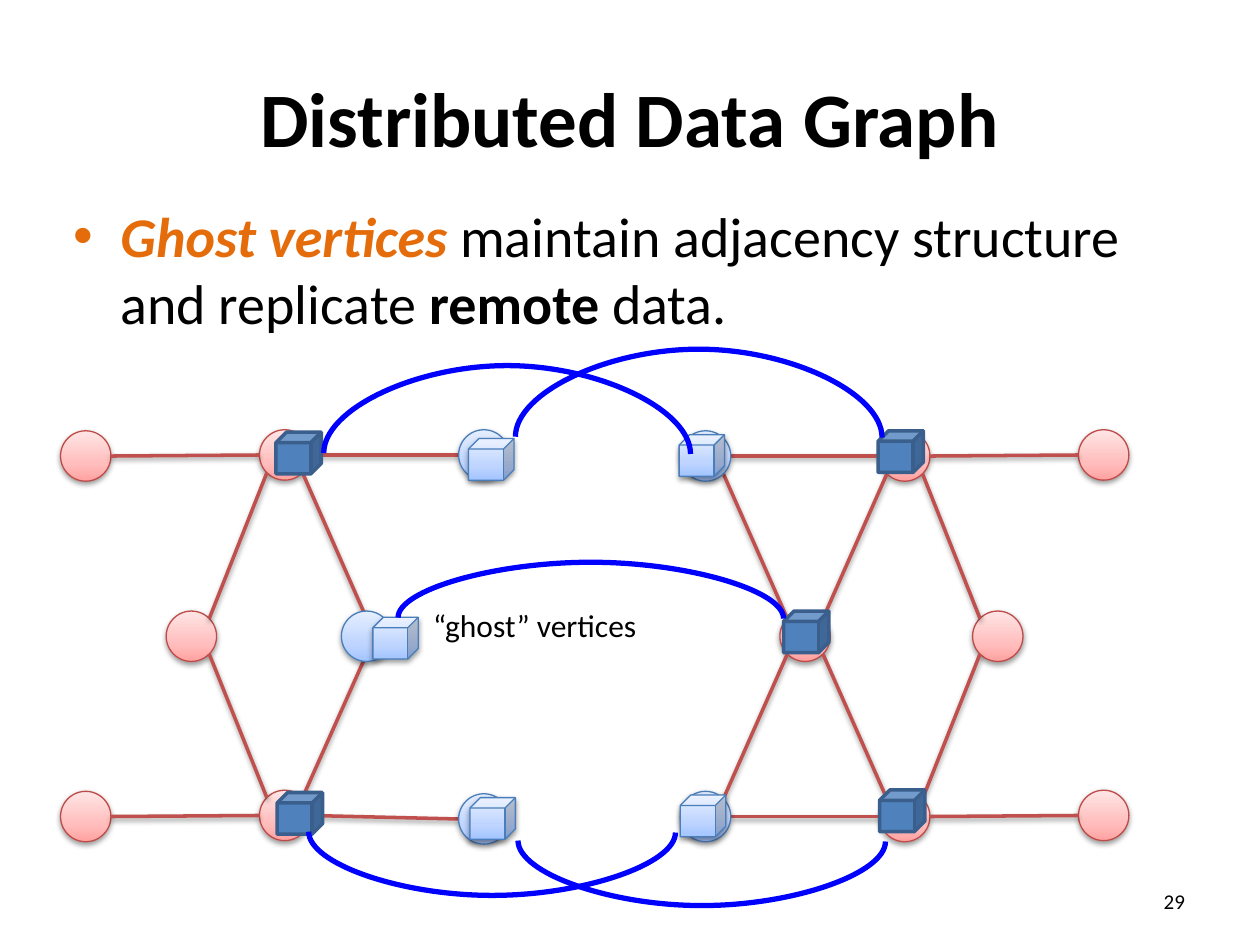
import copy

import pptx
import pptx.dml.color
import pptx.enum.shapes
import pptx.enum.text
import pptx.oxml
import pptx.oxml.ns
import pptx.util

Pt = pptx.util.Pt
qn = pptx.oxml.ns.qn
SHAPE = pptx.enum.shapes.MSO_SHAPE
CONNECTOR = pptx.enum.shapes.MSO_CONNECTOR
ALIGN = pptx.enum.text.PP_ALIGN
ANCHOR = pptx.enum.text.MSO_ANCHOR

RADIUS = 14.4
DIAGONAL = 10.2
CUBE_WIDTH, CUBE_HEIGHT = 25.9, 23.8
ARC_OFFSET = 0.5

RED = [(0, "FFE5E5"), (0.65, "FFBEBD"), (1, "FFA2A1")]
BLUE = [(0, "E5EEFF"), (0.65, "BFD5FF"), (1, "A3C4FF")]

# Vertex centres by partition
LOCAL = {
    "a top": (49, 260.6), "b top": (162.7, 260), "a low": (49, 466.6),
    "b low": (162.7, 466), "a mid": (109.4, 363.6),
    "c top": (517, 260.6), "d top": (630.7, 260), "c low": (517, 466.6),
    "d low": (630.7, 466), "c mid": (460.1, 363.6), "d mid": (570.2, 363.6),
}
GHOST = {
    "left top": (276.5, 260), "left low": (276.5, 468), "left mid": (209.5, 363.6),
    "right top": (403.2, 260.6), "right low": (403.2, 466.6),
}
EDGES = [
    ("a top", "b top"), ("a low", "b low"), ("a mid", "b top"), ("a mid", "b low"),
    ("b top", "left top"), ("b low", "left low"), ("b top", "left mid"), ("b low", "left mid"),
    ("right top", "c top"), ("right low", "c low"), ("c top", "d top"), ("c low", "d low"),
    ("right top", "c mid"), ("right low", "c mid"), ("c mid", "c top"), ("c mid", "c low"),
    ("c top", "d mid"), ("c low", "d mid"),
]
# Left end, right end, height of both ends, rise (negative) or drop of the arc
ARCS = [
    (294.5, 504, 249.8, -49), (227.5, 447.8, 353.2, -31), (296, 506, 480.6, 36.4),
    (185, 394.6, 259.2, -49), (176.4, 386, 475.5, 35.7),
]
MASTER_CUBES = [(447.8, 349.2), (501.8, 246.2), (502.6, 451.4), (157.7, 247), (158.4, 452.9)]
REPLICA_CUBES = [(213.1, 352.8), (267.8, 250.6), (268.6, 455.8), (388.1, 248.4), (388.8, 454.3)]


def color(hex_string):
    return pptx.dml.color.RGBColor.from_string(hex_string)


def write(paragraph, text, size=18, fill="000000", bold=False, italic=False):
    run = paragraph.add_run()
    run.text = text
    run.font.name = "Calibri"
    run.font.size = Pt(size)
    run.font.bold = bold
    run.font.italic = italic
    run.font.color.rgb = color(fill)


def place(item, x, y, width, height):
    item.left, item.top, item.width, item.height = Pt(x), Pt(y), Pt(width), Pt(height)


class GraphSlide:
    edge_color = "C0504D"
    arc_color = "0000FF"

    def __init__(self, deck):
        self.slide = deck.slides.add_slide(deck.slide_layouts[1])
        self.shapes = self.slide.shapes

    def title(self, text):
        heading = self.shapes.title
        place(heading, 36, 21.6, 648, 90)
        heading.text_frame.vertical_anchor = ANCHOR.MIDDLE
        paragraph = heading.text_frame.paragraphs[0]
        paragraph.alignment = ALIGN.CENTER
        write(paragraph, text, size=44, bold=True)

    def bullet(self, runs):
        body = self.slide.placeholders[1]
        place(body, 34.6, 111.6, 655, 100.8)
        for text, style in runs:
            write(body.text_frame.paragraphs[0], text, size=32, **style)

    def label(self, text, x, y, width, height, size, align=ALIGN.LEFT, anchor=ANCHOR.TOP):
        frame = self.shapes.add_textbox(Pt(x), Pt(y), Pt(width), Pt(height)).text_frame
        frame.word_wrap = True
        frame.vertical_anchor = anchor
        frame.paragraphs[0].alignment = align
        write(frame.paragraphs[0], text, size=size)

    def effects(self, item, shadow):
        """Give the item a soft drop shadow, or an empty effect list."""
        properties = item._element.spPr
        for old in properties.findall(qn("a:effectLst")):
            properties.remove(old)
        inner = (
            '<a:outerShdw blurRad="39370" dist="20320" dir="5400000" rotWithShape="0">'
            '<a:srgbClr val="000000"><a:alpha val="38000"/></a:srgbClr></a:outerShdw>'
        ) if shadow else ""
        namespace = pptx.oxml.ns.nsdecls("a")
        properties.append(pptx.oxml.parse_xml(f"<a:effectLst {namespace}>{inner}</a:effectLst>"))

    def gradient(self, shape, stops):
        shape.fill.gradient()
        shape.fill.gradient_angle = 270
        stop_list = shape._element.spPr.find(qn("a:gradFill")).find(qn("a:gsLst"))
        stop_list.append(copy.deepcopy(stop_list[-1]))
        for stop, (position, tint) in zip(shape.fill.gradient_stops, stops):
            stop.position = position
            stop.color.rgb = color(tint)

    def solid(self, kind, x, y, width, height, fill, line, weight=0.75):
        """Draw a shape; a list of gradient stops as fill also brings a shadow."""
        shape = self.shapes.add_shape(kind, Pt(x), Pt(y), Pt(width), Pt(height))
        shaded = isinstance(fill, list)
        if shaded:
            self.gradient(shape, fill)
        else:
            shape.fill.solid()
            shape.fill.fore_color.rgb = color(fill)
        shape.line.color.rgb = color(line)
        shape.line.width = Pt(weight)
        self.effects(shape, shaded)

    def vertex(self, center, fill, line):
        x, y = center
        self.solid(SHAPE.OVAL, x - RADIUS, y - RADIUS, 2 * RADIUS, 2 * RADIUS, fill, line)

    def edge(self, start, end, end_reach=DIAGONAL):
        """Join two vertices, left to right, at the rims of their circles."""
        (x1, y1), (x2, y2) = start, end
        if abs(y2 - y1) < RADIUS:
            x1, x2 = x1 + RADIUS, x2 - RADIUS
        else:
            rise = DIAGONAL if y2 > y1 else -DIAGONAL
            x1, y1, x2, y2 = x1 + DIAGONAL, y1 + rise, x2 - end_reach, y2 - rise
        line = self.shapes.add_connector(CONNECTOR.STRAIGHT, Pt(x1), Pt(y1), Pt(x2), Pt(y2))
        line.line.color.rgb = color(self.edge_color)
        line.line.width = Pt(2)
        self.effects(line, True)

    def arc(self, x1, x2, y, depth):
        """Curve between two points of equal height: a turned, mirrored connector."""
        span, middle = x2 - x1, (x1 + x2) / 2
        curve = self.shapes.add_connector(CONNECTOR.CURVE, 0, 0, 1, 1)
        place(curve, middle - ARC_OFFSET / 2, y - span / 2, ARC_OFFSET, span)
        properties = curve._element.spPr
        frame = properties.find(qn("a:xfrm"))
        frame.set("rot", "16200000")
        frame.set("flipH", "1")
        guides = properties.find(qn("a:prstGeom")).get_or_add_avLst()
        bend = round(depth / ARC_OFFSET * 100000)
        guides.append(pptx.oxml.parse_xml(
            f'<a:gd {pptx.oxml.ns.nsdecls("a")} name="adj1" fmla="val {bend}"/>'))
        curve.line.color.rgb = color(self.arc_color)
        curve.line.width = Pt(3)
        self.effects(curve, False)

    def cube(self, x, y, fill, line, weight):
        self.solid(SHAPE.CUBE, x, y, CUBE_WIDTH, CUBE_HEIGHT, fill, line, weight)


def main():
    deck = pptx.Presentation()
    deck.slide_width, deck.slide_height = Pt(720), Pt(540)
    graph = GraphSlide(deck)
    graph.title("Distributed Data Graph")
    graph.bullet([
        ("Ghost vertices ", {"fill": "E46C0A", "bold": True, "italic": True}),
        ("maintain adjacency structure and replicate ", {}),
        ("remote", {"bold": True}),
        (" data.", {}),
    ])

    for center in LOCAL.values():
        graph.vertex(center, RED, "BE4B48")
    centers = {**LOCAL, **GHOST}
    for start, end in EDGES:
        reach = 0 if end == "left mid" else DIAGONAL
        graph.edge(centers[start], centers[end], end_reach=reach)
    for center in GHOST.values():
        graph.vertex(center, BLUE, "4A7EBB")

    graph.label("“ghost” vertices", 240.5, 342.7, 185, 36, size=18)
    graph.label("29", 516.2, 500.4, 168, 28.8, size=12, align=ALIGN.RIGHT, anchor=ANCHOR.MIDDLE)

    for x, y in MASTER_CUBES:
        graph.cube(x, y, "4F81BD", "3A5F8C", 2)
    for x, y in REPLICA_CUBES:
        graph.cube(x, y, BLUE, "4A7EBB", 0.75)
    for ends in ARCS:
        graph.arc(*ends)
    deck.save("out.pptx")


if __name__ == "__main__":
    main()
